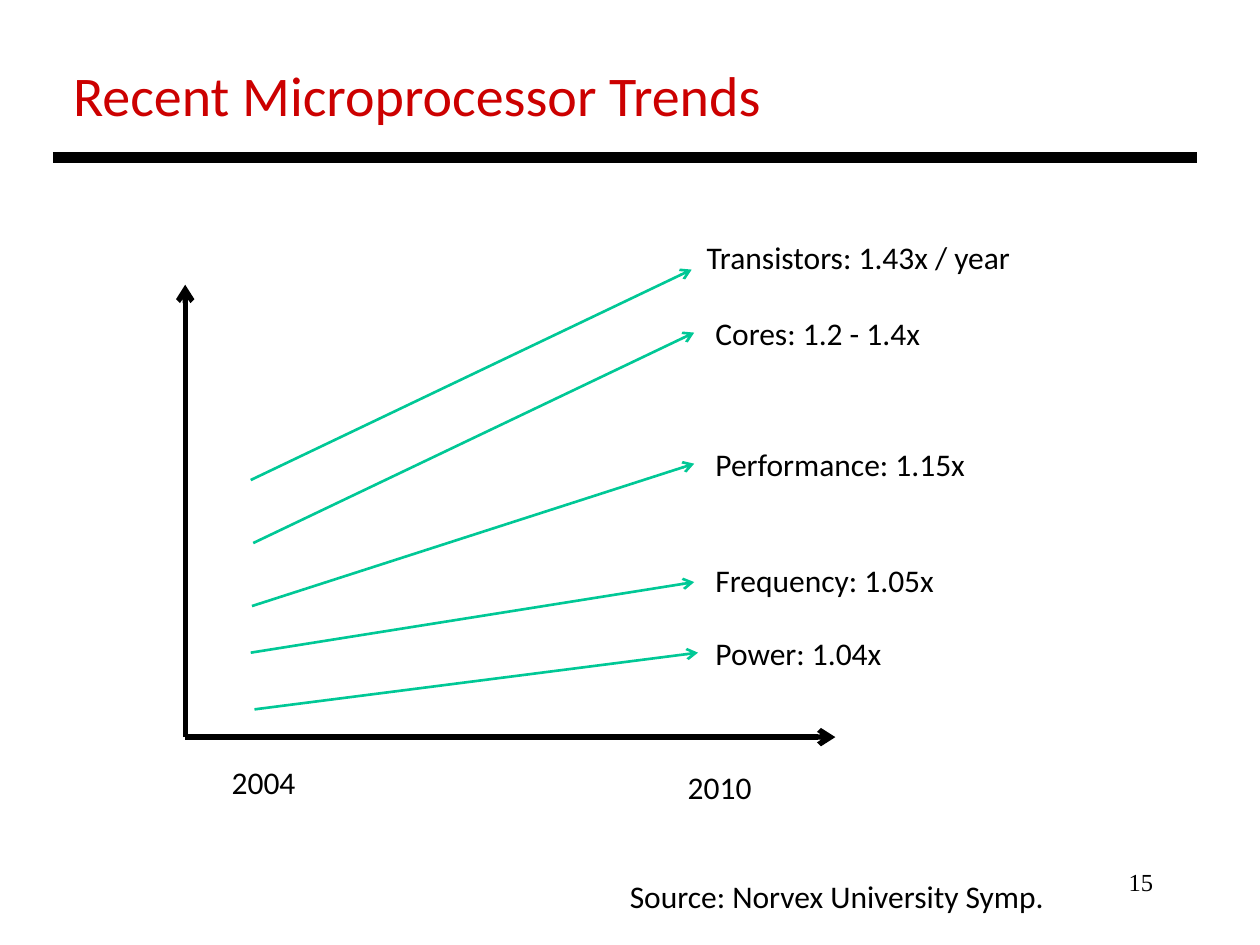
"""Build the slide on recent microprocessor trends."""
from pptx import Presentation
from pptx.dml.color import RGBColor
from pptx.enum.shapes import MSO_CONNECTOR
from pptx.enum.text import MSO_ANCHOR, PP_ALIGN
from pptx.oxml.ns import qn
from pptx.util import Inches, Pt
from lxml.etree import SubElement

BLACK = RGBColor(0x00, 0x00, 0x00)
RED = RGBColor(0xCC, 0x00, 0x00)
GREEN = RGBColor(0x00, 0xC8, 0x96)

TITLE = "Recent Microprocessor Trends"
TRENDS = [
    ("Transistors: 1.43x / year", (5.51, 1.84), (1.99, 3.81), (5.49, 2.14)),
    ("Cores: 1.2 - 1.4x", (5.58, 2.44), (2.01, 4.31), (5.51, 2.64)),
    ("Performance: 1.15x", (5.58, 3.48), (2, 4.81), (5.51, 3.68)),
    ("Frequency: 1.05x", (5.58, 4.4), (1.99, 5.18), (5.51, 4.62)),
    ("Power: 1.04x", (5.58, 4.98), (2.02, 5.63), (5.54, 5.18)),
]
NOTES = [
    ("2004", (1.74, 6.01), 0.71),
    ("2010", (5.36, 6.05), 0.71),
    ("Source: Norvex University Symp.", (4.9, 6.91), 3.53),
]
ORIGIN = (1.47, 5.85)
AXES = [(6.63, 5.85), (1.47, 2.26)]
RULE = [(0.42, 1.25), (9.5, 1.25)]


def style(shape, text, size, color=BLACK, face="Calibri", align=PP_ALIGN.LEFT):
    frame = shape.text_frame
    frame.text = text
    frame.vertical_anchor = MSO_ANCHOR.TOP
    para = frame.paragraphs[0]
    para.alignment = align
    para.font.name = face
    para.font.size = Pt(size)
    para.font.color.rgb = color
    return frame


def label(slide, text, spot, width):
    box = slide.shapes.add_textbox(*map(Inches, (*spot, width, 0.4)))
    style(box, text, 18).word_wrap = False


def line(slide, start, end, color, width, arrow=True):
    ends = map(Inches, (*start, *end))
    link = slide.shapes.add_connector(MSO_CONNECTOR.STRAIGHT, *ends)
    link.line.color.rgb = color
    link.line.width = Pt(width)
    if arrow:
        SubElement(link.line._get_or_add_ln(), qn("a:tailEnd"), type="arrow")
    SubElement(link._element.spPr, qn("a:effectLst"))


def main():
    deck = Presentation()
    deck.slide_width, deck.slide_height = Inches(10), Inches(7.5)
    slide = deck.slides.add_slide(deck.slide_layouts[5])

    title = slide.shapes.title
    title.left, title.top = Inches(0.48), Inches(0.43)
    title.width, title.height = Inches(5.71), Inches(0.64)
    style(title, TITLE, 32, RED).word_wrap = False

    line(slide, *RULE, BLACK, 6, arrow=False)
    for end in AXES:
        line(slide, ORIGIN, end, BLACK, 3)
    for text, spot, start, end in TRENDS:
        line(slide, start, end, GREEN, 1.5)
        label(slide, text, spot, 2.63)
    for text, spot, width in NOTES:
        label(slide, text, spot, width)

    page = slide.shapes.add_textbox(*map(Inches, (7.17, 6.83, 2.08, 0.5)))
    style(page, "15", 14, face="Times New Roman", align=PP_ALIGN.RIGHT)
    deck.save("out.pptx")


if __name__ == "__main__":
    main()
